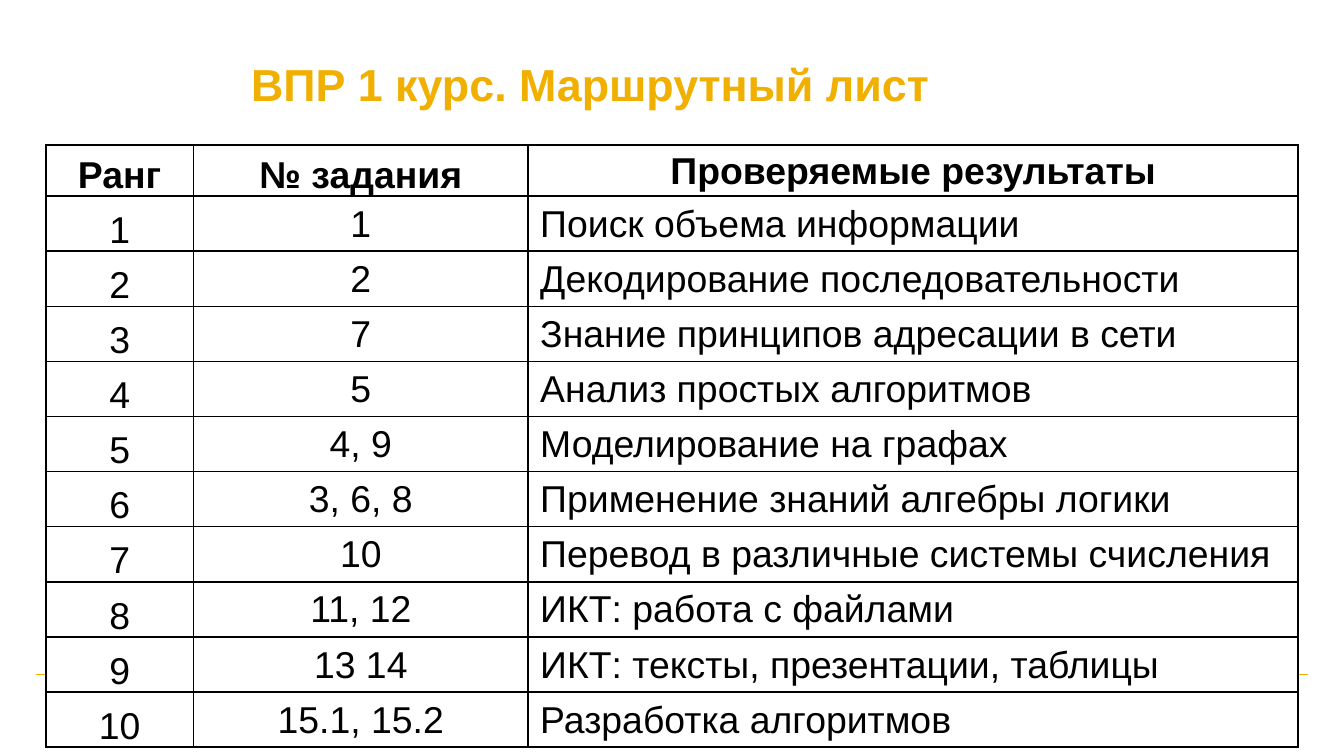
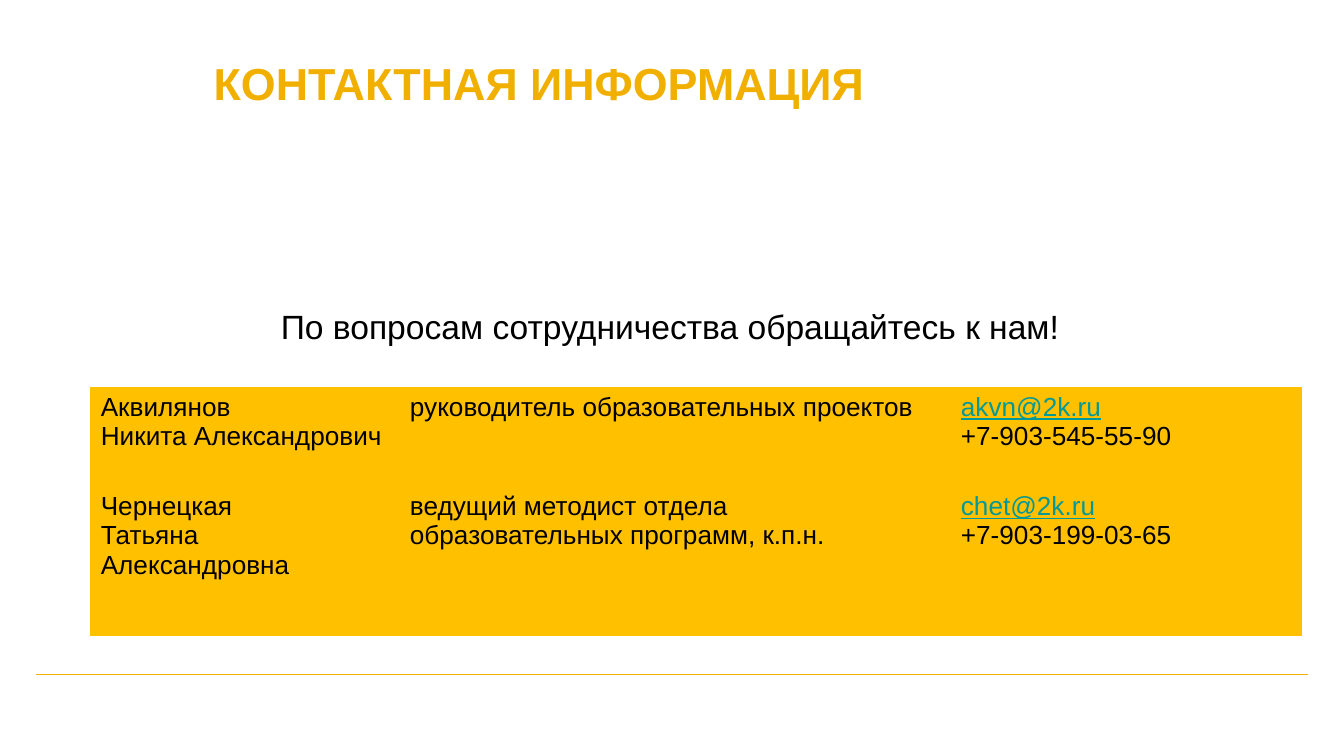
from pptx import Presentation
from pptx.dml.color import RGBColor
from pptx.enum.shapes import MSO_CONNECTOR
from pptx.enum.text import MSO_ANCHOR as Anchor, PP_ALIGN as Align
from pptx.oxml import parse_xml
from pptx.oxml.ns import nsdecls, qn
from pptx.util import Inches, Pt

WIDTH = 10
HEIGHT = WIDTH * 9 / 16
GOLD, AMBER, TEAL, BLACK, WHITE = "F1AF00", "FFC000", "009999", "000000", "FFFFFF"
FONT = "Arial"
PLAIN_TABLE = "{2D5ABB26-0587-4C30-8999-92F81FD0307C}"

ROUTE_TITLE = "ВПР 1 курс. Маршрутный лист"
ROUTE_HEADER = ("Ранг", "№ задания", "Проверяемые результаты")
ROUTE = [
    ("1", "Поиск объема информации"),
    ("2", "Декодирование последовательности"),
    ("7", "Знание принципов адресации в сети"),
    ("5", "Анализ простых алгоритмов"),
    ("4, 9", "Моделирование на графах"),
    ("3, 6, 8", "Применение знаний алгебры логики"),
    ("10", "Перевод в различные системы счисления"),
    ("11, 12", "ИКТ: работа с файлами"),
    ("13 14", "ИКТ: тексты, презентации, таблицы"),
    ("15.1, 15.2", "Разработка алгоритмов"),
]

CONTACT_TITLE = "КОНТАКТНАЯ ИНФОРМАЦИЯ"
INVITATION = "По вопросам сотрудничества обращайтесь к нам!"
CONTACTS = [
    ("Аквилянов\nНикита Александрович",
     "руководитель образовательных проектов",
     "akvn@2k.ru\n+7-903-545-55-90"),
    ("Чернецкая\nТатьяна Александровна",
     "ведущий методист отдела образовательных программ, к.п.н.",
     "chet@2k.ru\n+7-903-199-03-65"),
]


def rgb(color):
    return RGBColor.from_string(color)


def style(para, size, color=BLACK, bold=False, align=Align.LEFT):
    para.alignment = align
    para.font.name = FONT
    para.font.size = Pt(size)
    para.font.bold = bold
    para.font.color.rgb = rgb(color)


def add_page(deck):
    """Add a blank slide with the gold line near its foot."""
    page = deck.slides.add_slide(deck.slide_layouts[6])
    margin, level = 0.27, 5.02
    line = page.shapes.add_connector(
        MSO_CONNECTOR.STRAIGHT, Inches(margin), Inches(level),
        Inches(WIDTH - margin), Inches(level))
    line.line.color.rgb = rgb(GOLD)
    line.line.width = Pt(0.75)
    line.element.spPr.append(parse_xml(f"<a:effectLst {nsdecls('a')}/>"))
    return page


def add_text(page, text, place, size, inset=0.1, anchor=Anchor.TOP, **look):
    box = page.shapes.add_textbox(*map(Inches, place))
    frame = box.text_frame
    frame.word_wrap = True
    frame.vertical_anchor = anchor
    frame.margin_left = frame.margin_right = Inches(inset)
    frame.text = text
    style(frame.paragraphs[0], size, **look)


def add_title(page, text, place, **layout):
    add_text(page, text, place, 24, color=GOLD, bold=True, **layout)


def add_table(page, rows, left, top, widths, heights):
    """Add an unstyled table holding the given rows of text."""
    frame = page.shapes.add_table(
        len(rows), len(widths), Inches(left), Inches(top),
        Inches(sum(widths)), Inches(sum(heights)))
    for style_id in frame.element.iter(qn("a:tableStyleId")):
        style_id.text = PLAIN_TABLE
    table = frame.table
    table.first_row = table.horz_banding = False
    for column, width in zip(table.columns, widths):
        column.width = Inches(width)
    for row, height, texts in zip(table.rows, heights, rows):
        row.height = Inches(height)
        for cell, text in zip(row.cells, texts):
            cell.text = text
    return table


def outline(cell):
    """Draw a black border on all four sides; call before filling the cell."""
    properties = cell._tc.get_or_add_tcPr()
    for index, side in enumerate("LRTB"):
        properties.insert(index, parse_xml(
            f'<a:ln{side} {nsdecls("a")} w="{Pt(1)}"><a:solidFill>'
            f'<a:srgbClr val="{BLACK}"/></a:solidFill></a:ln{side}>'))


def finish(cell, fill, margins, anchor=Anchor.TOP):
    cell.fill.solid()
    cell.fill.fore_color.rgb = rgb(fill)
    (cell.margin_left, cell.margin_top,
     cell.margin_right, cell.margin_bottom) = map(Inches, margins)
    cell.vertical_anchor = anchor


def build_route(deck):
    page = add_page(deck)
    rows = [ROUTE_HEADER] + [
        (str(rank), *entry) for rank, entry in enumerate(ROUTE, 1)]
    heights = [0.38] + [0.41] * len(ROUTE)
    table = add_table(page, rows, 0.34, 1.08, (1.1, 2.49, 5.73), heights)
    for r, row in enumerate(table.rows):
        for c, cell in enumerate(row.cells):
            header, result = r == 0, r > 0 and c == 2
            low = c == 0 or (header and c == 1)
            outline(cell)
            finish(cell, WHITE, (0.09 if result else 0.01, 0.01, 0.01, 0),
                   Anchor.BOTTOM if low else Anchor.MIDDLE)
            style(cell.text_frame.paragraphs[0], 20, bold=header,
                  align=Align.LEFT if result else Align.CENTER)
    add_title(page, ROUTE_TITLE, (1.77, 0.37, 7.56, 0.4))


def build_contacts(deck):
    page = add_page(deck)
    add_title(page, CONTACT_TITLE, (1.53, -0.09, 8.79, 1.41),
              inset=0.06, anchor=Anchor.MIDDLE)
    table = add_table(page, CONTACTS, 0.67, 2.88, (2.3, 4.1, 2.62), (0.74, 1.11))
    for cell in table.iter_cells():
        finish(cell, AMBER, (0.08, 0.04, 0.08, 0.04))
        for para in cell.text_frame.paragraphs:
            email = "@" in para.text
            style(para, 14, TEAL if email else BLACK)
            para.font.underline = email
    add_text(page, INVITATION, (0.89, 2.23, 8.19, 0.4), 18, align=Align.CENTER)


def main():
    deck = Presentation()
    deck.slide_width, deck.slide_height = Inches(WIDTH), Inches(HEIGHT)
    build_route(deck)
    build_contacts(deck)
    deck.save("out.pptx")


if __name__ == "__main__":
    main()
